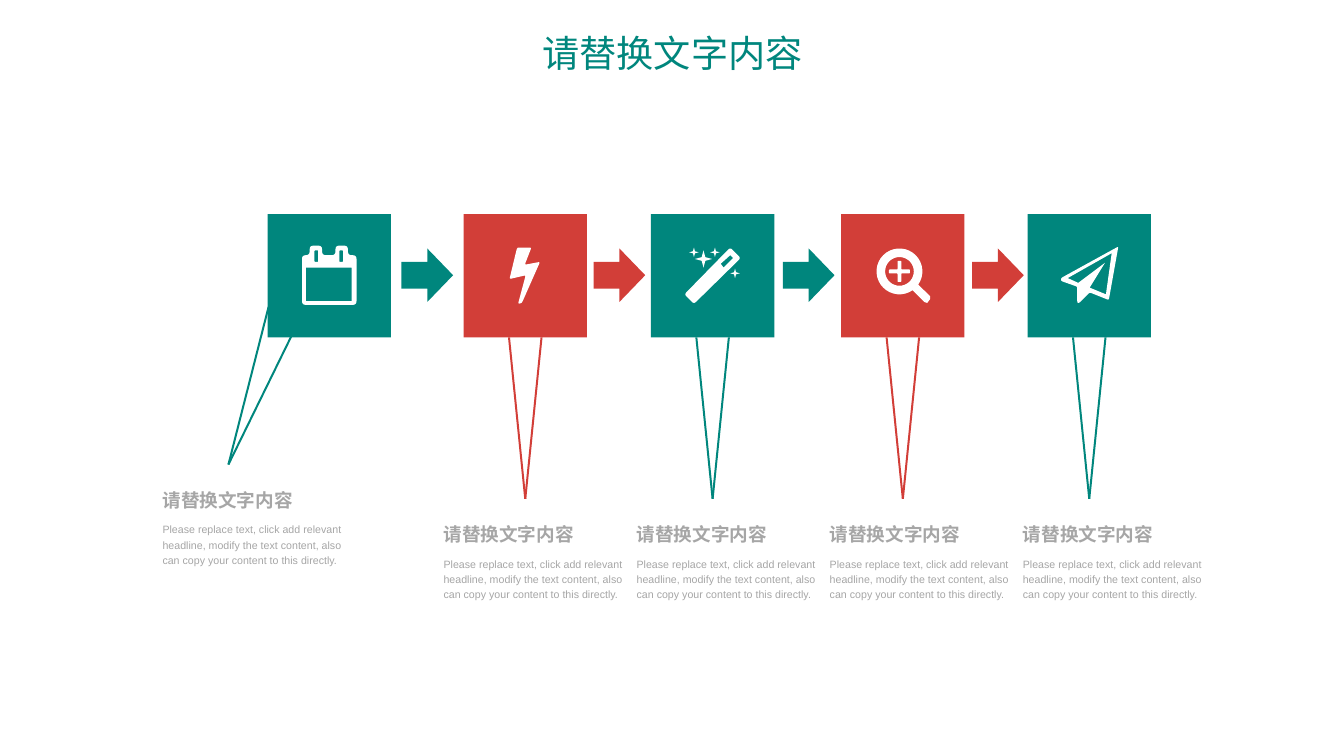
import math

import pptx
import pptx.dml.color
import pptx.enum.shapes
import pptx.enum.text
import pptx.oxml.ns
import pptx.util
from lxml import etree

Inches = pptx.util.Inches
RGBColor = pptx.dml.color.RGBColor
MSO_SHAPE = pptx.enum.shapes.MSO_SHAPE
ANCHOR = pptx.enum.text.MSO_ANCHOR
ALIGN = pptx.enum.text.PP_ALIGN
qn = pptx.oxml.ns.qn

TEAL = RGBColor(0x00, 0x86, 0x7D)
RED = RGBColor(0xD2, 0x3E, 0x38)
GRAY = RGBColor(0xA6, 0xA6, 0xA6)
WHITE = RGBColor(0xFF, 0xFF, 0xFF)
CJK_FONT = "Noto Sans CJK SC"

HEADING = "请替换文字内容"
BODY = ("Please replace text, click add relevant headline, modify the text "
        "content, also can copy your content to this directly.")

SQUARE, SQUARE_TOP = 1.29, 2.24
SQUARE_LEFTS = [2.8, 4.85, 6.81, 8.8, 10.75]
ARROW_LEFTS = [4.2, 6.21, 8.19, 10.17]
COLORS = [TEAL, RED, TEAL, RED, TEAL]


def rounded(points, radius):
    """Polygon whose corners are replaced by short quadratic curves."""
    out = []
    for i, (x, y) in enumerate(points):
        ends = []
        for nx, ny in (points[i - 1], points[(i + 1) % len(points)]):
            dist = math.hypot(nx - x, ny - y)
            k = min(radius / dist, 0.5)
            ends.append((x + (nx - x) * k, y + (ny - y) * k))
        (ax, ay), (bx, by) = ends
        for t in (0, 0.25, 0.5, 0.75, 1):
            u, v, w = (1 - t) ** 2, 2 * t * (1 - t), t * t
            out.append((u * ax + v * x + w * bx, u * ay + v * y + w * by))
    return out


def box(left, top, right, bottom):
    return [(left, top), (right, top), (right, bottom), (left, bottom)]


def arc(cx, cy, radius, start=0, end=360, step=10):
    return [(cx + radius * math.cos(math.radians(a)),
             cy + radius * math.sin(math.radians(a)))
            for a in range(start, end + 1, step)]


def sparkle(cx, cy, radius):
    """Four-pointed star."""
    return [(cx + r * math.cos(i * math.pi / 4), cy + r * math.sin(i * math.pi / 4))
            for i, r in enumerate([radius, 0.3 * radius] * 4)]


def plus(cx, cy, arm, half):
    corner = [(half, -arm), (half, -half), (arm, -half)]
    points = []
    for _ in range(4):
        points += [(cx + x, cy + y) for x, y in corner]
        corner = [(-y, x) for x, y in corner]
    return points


# Contours in inches from the top left corner of the square
CALENDAR = [
    rounded([(0.36, 0.95), (0.36, 0.43), (0.44, 0.43), (0.44, 0.33), (0.57, 0.33),
             (0.57, 0.43), (0.71, 0.43), (0.71, 0.33), (0.84, 0.33), (0.84, 0.43),
             (0.93, 0.43), (0.93, 0.95)], 0.04),
    box(0.4, 0.56, 0.88, 0.91),
    rounded(box(0.49, 0.38, 0.53, 0.5), 0.01),
    rounded(box(0.75, 0.38, 0.79, 0.5), 0.01),
]
BOLT = [
    rounded([(0.8, 0.5), (0.61, 0.93), (0.57, 0.94), (0.65, 0.64), (0.48, 0.68),
             (0.56, 0.35), (0.71, 0.35), (0.64, 0.53)], 0.02),
]
WAND = [
    rounded([(0.94, 0.46), (0.45, 0.94), (0.35, 0.84), (0.83, 0.35)], 0.03),
    [(0.86, 0.46), (0.83, 0.43), (0.73, 0.52), (0.76, 0.56)],
    sparkle(0.55, 0.47, 0.09),
    sparkle(0.45, 0.4, 0.05),
    sparkle(0.67, 0.4, 0.05),
    sparkle(0.88, 0.62, 0.05),
]
MAGNIFIER = [
    arc(0.61, 0.6, 0.24, 55, 395) + [(0.93, 0.86), (0.93, 0.89), (0.9, 0.93), (0.87, 0.92)],
    arc(0.61, 0.6, 0.15),
    rounded(plus(0.61, 0.6, 0.11, 0.02), 0.01),
]
PLANE = [
    rounded([(0.95, 0.34), (0.85, 0.9), (0.65, 0.82), (0.54, 0.93), (0.52, 0.93),
             (0.52, 0.76), (0.35, 0.7), (0.35, 0.67)], 0.02),
    [(0.88, 0.41), (0.42, 0.67), (0.53, 0.72), (0.81, 0.51), (0.65, 0.77), (0.82, 0.84)],
]
ICONS = [CALENDAR, BOLT, WAND, MAGNIFIER, PLANE]


class Deck:
    """Current slide and the style of its elements."""

    TITLE = {"size": pptx.util.Pt(28), "name": CJK_FONT}
    CAPTION = {"size": pptx.util.Pt(14), "name": "Arial", "bold": True}
    BODY = {"size": pptx.util.Pt(8), "name": "Arial"}
    FLUSH = {"margin_left": 0, "margin_right": 0, "margin_top": 0, "margin_bottom": 0}
    MIDDLE = {"vertical_anchor": ANCHOR.MIDDLE}
    PADDED = {**FLUSH, **MIDDLE, "margin_top": Inches(0.11), "margin_bottom": Inches(0.11)}

    def __init__(self, prs):
        self.s = prs.slides.add_slide(prs.slide_layouts[6])

    def paint(self, sp, color):
        sp.shadow.inherit = False
        sp.fill.solid()
        sp.fill.fore_color.rgb = color
        sp.line.fill.background()

    def shape(self, kind, left, top, width, height, color):
        sp = self.s.shapes.add_shape(kind, *map(Inches, (left, top, width, height)))
        self.paint(sp, color)

    def line(self, start, end, color):
        c = self.s.shapes.add_connector(pptx.enum.shapes.MSO_CONNECTOR.STRAIGHT,
                                        *map(Inches, start + end))
        c.line.color.rgb = color
        c.line.width = pptx.util.Pt(1.5)
        etree.SubElement(c._element.spPr, qn("a:effectLst"))

    def icon(self, contours, left, top):
        placed = [[(Inches(left + x), Inches(top + y)) for x, y in c] for c in contours]
        fb = self.s.shapes.build_freeform(*placed[0][0])
        for i, points in enumerate(placed):
            if i:
                fb.move_to(*points[0])
            fb.add_line_segments(points[1:], close=True)
        self.paint(fb.convert_to_shape(), WHITE)

    def text(self, text, left, top, width, height, color, font, frame, align=ALIGN.LEFT):
        tf = self.s.shapes.add_textbox(*map(Inches, (left, top, width, height))).text_frame
        for key, value in {"word_wrap": True, **frame}.items():
            setattr(tf, key, value)
        p = tf.paragraphs[0]
        p.alignment, p.line_spacing = align, 1.2
        r = p.add_run()
        r.text = text
        for key, value in font.items():
            setattr(r.font, key, value)
        r.font.color.rgb = color
        etree.SubElement(r._r.get_or_add_rPr(), qn("a:ea")).set("typeface", CJK_FONT)


def main():
    prs = pptx.Presentation()
    prs.slide_width, prs.slide_height = Inches(14.06), Inches(7.91)
    deck = Deck(prs)

    for i, (left, color, icon) in enumerate(zip(SQUARE_LEFTS, COLORS, ICONS)):
        if i == 0:
            tip, ends = (2.39, 4.86), [(2.81, 3.21), (3.14, 3.33)]
            text_left, text_top = 1.7, 5.02
        else:
            center = left + SQUARE / 2
            tip = (center, 5.22)
            ends = [(center + dx, SQUARE_TOP + SQUARE) for dx in (-0.17, 0.17)]
            text_left, text_top = 4.64 + 2.02 * (i - 1), 5.38
        for end in ends:
            deck.line(tip, end, color)
        deck.shape(MSO_SHAPE.RECTANGLE, left, SQUARE_TOP, SQUARE, SQUARE, color)
        deck.icon(icon, left, SQUARE_TOP)
        deck.text(HEADING, text_left, text_top, 1.46, 0.37, GRAY, deck.CAPTION, deck.PADDED)
        deck.text(BODY, text_left, text_top + 0.43, 1.92, 0.47, GRAY, deck.BODY, deck.FLUSH)

    for left, color in zip(ARROW_LEFTS, COLORS):
        deck.shape(MSO_SHAPE.RIGHT_ARROW, left, 2.6, 0.54, 0.56, color)

    deck.text(HEADING, 5.31, 0.17, 3.45, 0.67, TEAL, deck.TITLE, deck.MIDDLE, ALIGN.CENTER)
    prs.save("out.pptx")


if __name__ == "__main__":
    main()
